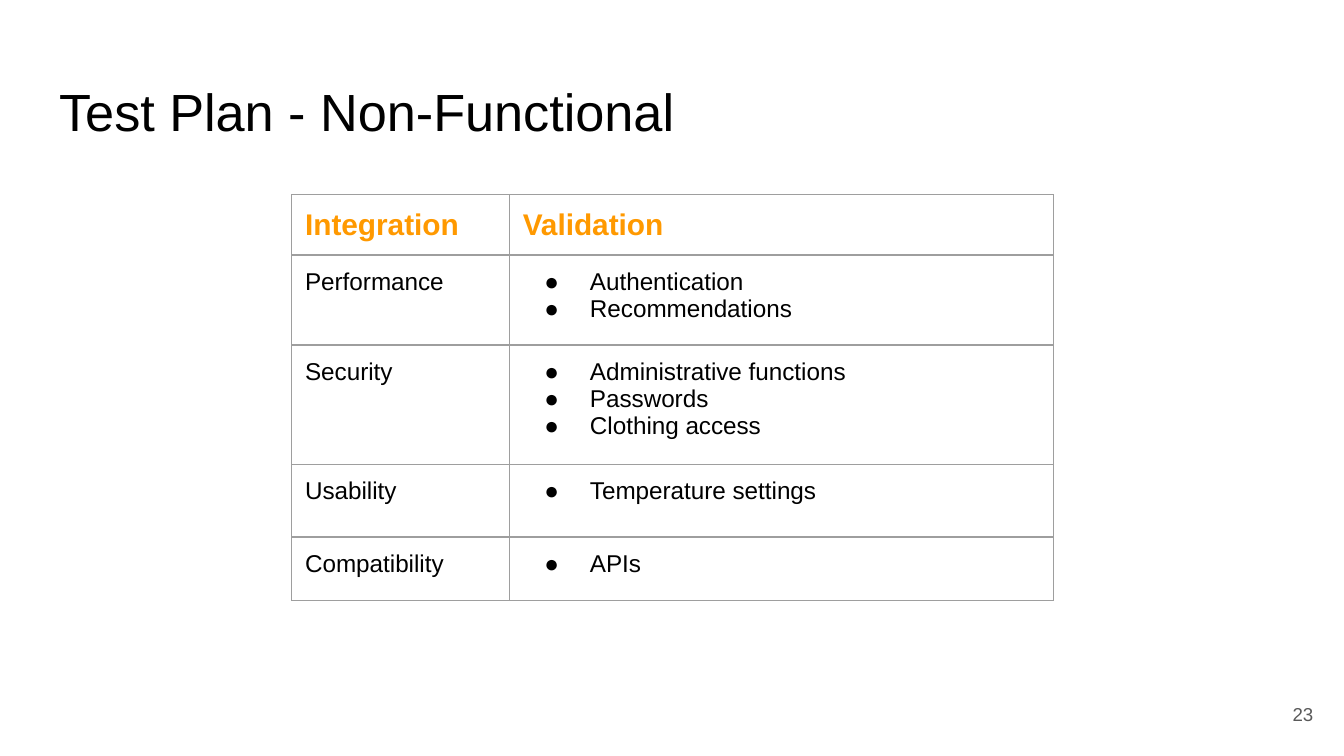
"""Build the non-functional test plan slide with its validation table."""
from lxml.etree import SubElement
from pptx import Presentation
from pptx.dml.color import RGBColor
from pptx.enum.text import MSO_ANCHOR, PP_ALIGN
from pptx.oxml.ns import qn
from pptx.util import Inches, Pt

BLACK = RGBColor(0x00, 0x00, 0x00)
ORANGE = RGBColor(0xFF, 0x99, 0x00)
GRAY = RGBColor(0x59, 0x59, 0x59)
BORDER = RGBColor(0x9E, 0x9E, 0x9E)


def write(frame, *lines, size, color=BLACK, bold=False, align=PP_ALIGN.LEFT,
          anchor=MSO_ANCHOR.TOP, bullet=False):
    frame.word_wrap = True
    frame.vertical_anchor = anchor
    frame.margin_left = frame.margin_right = Inches(0.1)
    frame.margin_top = frame.margin_bottom = Inches(0.1)
    for index, line in enumerate(lines):
        paragraph = frame.add_paragraph() if index else frame.paragraphs[0]
        paragraph.alignment = align
        paragraph.line_spacing = 1.0
        paragraph.space_before = Pt(0)
        run = paragraph.add_run()
        run.text = line
        run.font.name = "Arial"
        run.font.size = Pt(size)
        run.font.bold = bold
        run.font.color.rgb = color
        if bullet:
            properties = paragraph._p.get_or_add_pPr()
            properties.set("marL", str(Inches(0.5)))
            properties.set("indent", str(Inches(-0.34)))
            bullet_color = SubElement(properties, qn("a:buClr"))
            SubElement(bullet_color, qn("a:srgbClr"), val=str(color))
            SubElement(properties, qn("a:buFont"), typeface="Arial")
            SubElement(properties, qn("a:buChar"), char="●")


def outline(cell):
    properties = cell._tc.get_or_add_tcPr()
    for position, side in enumerate(("a:lnL", "a:lnR", "a:lnT", "a:lnB")):
        line = SubElement(properties, qn(side), w=str(Pt(0.75)))
        fill = SubElement(line, qn("a:solidFill"))
        SubElement(fill, qn("a:srgbClr"), val=str(BORDER))
        properties.insert(position, line)


presentation = Presentation()
presentation.slide_width = Inches(10)
presentation.slide_height = Inches(10) * 9 // 16
slide = presentation.slides.add_slide(presentation.slide_layouts[5])

heading = slide.shapes.title
heading.left, heading.top = Inches(0.34), Inches(0.49)
heading.width, heading.height = Inches(9.32), Inches(0.63)
write(heading.text_frame, "Test Plan - Non-Functional", size=28)

test_plan = [
    ("Performance", ["Authentication", "Recommendations"]),
    ("Security", ["Administrative functions", "Passwords", "Clothing access"]),
    ("Usability", ["Temperature settings"]),
    ("Compatibility", ["APIs"]),
]
column_widths = [1.62, 4.05]
row_heights = [0.44, 0.67, 0.89, 0.54, 0.47]
plan_table = slide.shapes.add_table(
    len(row_heights), len(column_widths), Inches(2.17), Inches(1.45),
    Inches(sum(column_widths)), Inches(sum(row_heights))).table
plan_table.first_row = False
plan_table.horz_banding = False
for column, width in zip(plan_table.columns, column_widths):
    column.width = Inches(width)
for row, height in zip(plan_table.rows, row_heights):
    row.height = Inches(height)

for cell in plan_table.iter_cells():
    cell.margin_left = cell.margin_right = Inches(0.1)
    cell.margin_top = cell.margin_bottom = Inches(0.1)
    cell.fill.background()
    outline(cell)

for column, label in enumerate(("Integration", "Validation")):
    write(plan_table.cell(0, column).text_frame, label, size=16, color=ORANGE, bold=True)
for row, (quality, checks) in enumerate(test_plan, start=1):
    write(plan_table.cell(row, 0).text_frame, quality, size=13)
    write(plan_table.cell(row, 1).text_frame, *checks, size=13, bullet=True)

page_number = slide.shapes.add_textbox(Inches(9.27), Inches(5.1), Inches(0.6), Inches(0.43))
write(page_number.text_frame, "23", size=10, color=GRAY,
      align=PP_ALIGN.RIGHT, anchor=MSO_ANCHOR.MIDDLE)

presentation.save("out.pptx")
